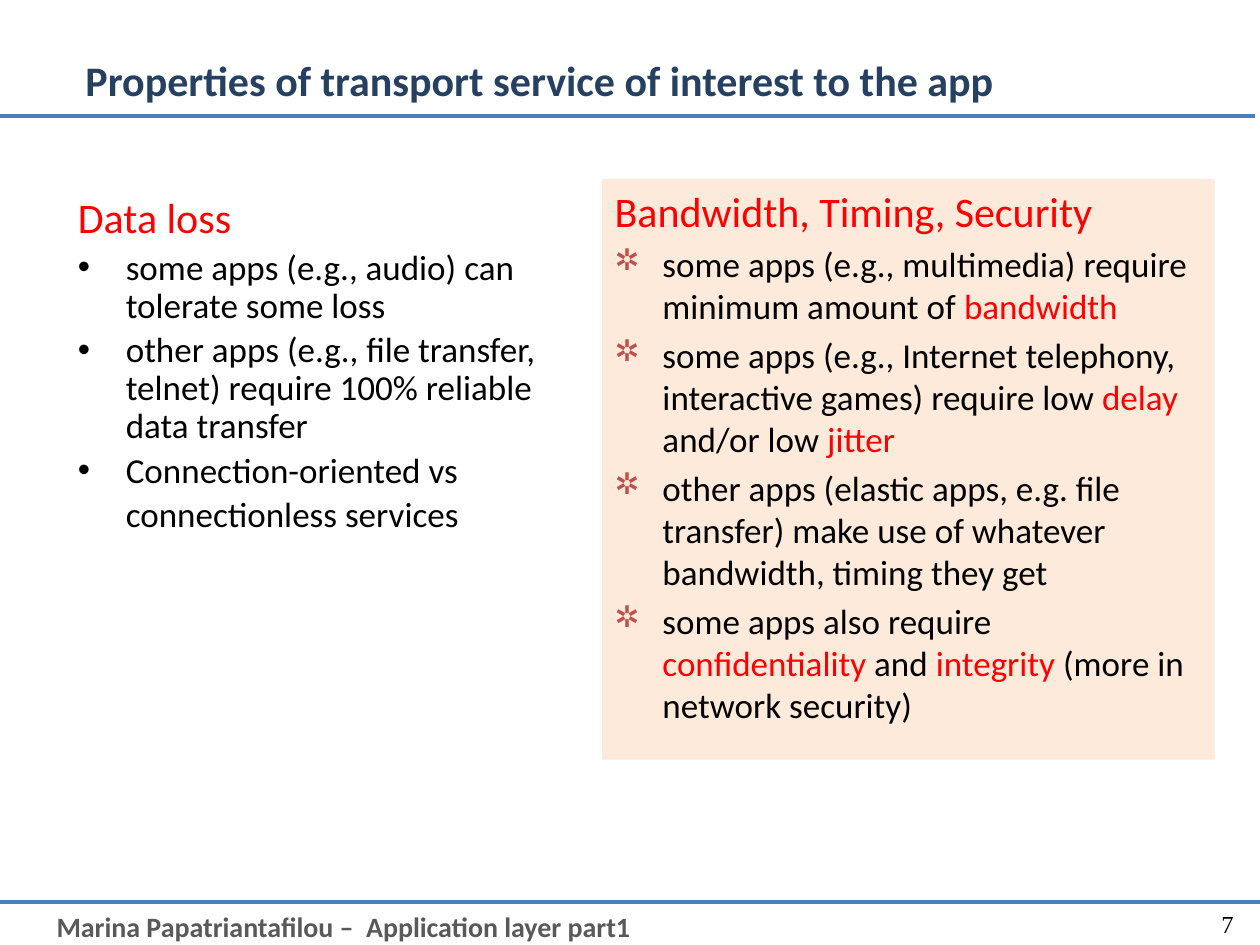
from dataclasses import dataclass
from typing import Optional

import pptx
import pptx.dml.color
import pptx.enum.shapes
import pptx.enum.text
import pptx.oxml.ns
import pptx.util
from lxml import etree
from pptx.util import Inches

ALIGN = pptx.enum.text.PP_ALIGN
ANCHOR = pptx.enum.text.MSO_ANCHOR


@dataclass(frozen=True)
class Theme:
    font: str = "Calibri"
    number_font: str = "Times New Roman"
    ink: str = "000000"
    accent: str = "FF0000"
    title: str = "254061"
    footer: str = "595959"
    rule: str = "4B7EBC"
    panel: str = "FDEADA"
    box_bullet: str = "C0504D"
    title_size: int = 24
    title_end_size: int = 32
    heading_size: int = 24
    body_size: int = 20
    footer_size: int = 16
    number_size: int = 14
    rule_width: float = 2.25


THEME = Theme()


@dataclass(frozen=True)
class Span:
    text: str
    color: str = THEME.ink
    size: int = THEME.body_size
    font: str = THEME.font
    bold: bool = False


@dataclass(frozen=True)
class Bullet:
    mark: str
    font: str
    color: Optional[str] = None
    percent: int = 100


@dataclass(frozen=True)
class Column:
    left: float
    top: float
    width: float
    height: float
    heading: str
    items: list[list[Span]]
    bullet: Bullet
    line_spacing: float = 1.0
    fill: Optional[str] = None


def red(text: str) -> Span:
    return Span(text, THEME.accent)


COLUMNS = [
    Column(
        0.52, 1.52, 4.15, 3.3, "Data loss",
        [
            [Span("some apps (e.g., audio) can tolerate some loss")],
            [Span("other apps (e.g., file transfer, telnet) require 100% reliable data transfer")],
            [Span("Connection-oriented vs connectionless services"),
             Span(" ", size=THEME.heading_size)],
        ],
        Bullet("•", "Arial"), line_spacing=0.9,
    ),
    Column(
        4.78, 1.42, 4.86, 4.61, "Bandwidth, Timing, Security",
        [
            [Span("some apps (e.g., multimedia) require minimum amount of "), red("bandwidth")],
            [Span("some apps (e.g., Internet telephony, interactive games) require low "),
             red("delay"), Span(" and/or low "), red("jitter")],
            [Span("other apps (elastic apps, e.g. file transfer) make use of whatever "
                  "bandwidth, timing they get")],
            [Span("some apps also require "), red("confidentiality"), Span(" and "),
             red("integrity "), Span("(more in network security)")],
        ],
        Bullet("❒", "ZapfDingbats", THEME.box_bullet, 85), fill=THEME.panel,
    ),
]


def rgb(value: str) -> pptx.dml.color.RGBColor:
    return pptx.dml.color.RGBColor.from_string(value)


def add_rule(page, left: float, top: float) -> None:
    rule = page.shapes.add_connector(
        pptx.enum.shapes.MSO_CONNECTOR.STRAIGHT,
        Inches(left), Inches(top), Inches(left + 10), Inches(top))
    rule.line.color.rgb = rgb(THEME.rule)
    rule.line.width = pptx.util.Pt(THEME.rule_width)
    etree.SubElement(rule._element.spPr, pptx.oxml.ns.qn("a:effectLst"))


def set_indent(para, bullet: Optional[Bullet], indent: float) -> None:
    """Hang the paragraph and give it its bullet; call after spacing is set."""
    qn = pptx.oxml.ns.qn
    props = para._p.get_or_add_pPr()
    props.set("marL", str(Inches(indent)))
    props.set("indent", str(-Inches(indent)))
    if bullet is None:
        etree.SubElement(props, qn("a:buNone"))
        return
    if bullet.color:
        color = etree.SubElement(props, qn("a:buClr"))
        etree.SubElement(color, qn("a:srgbClr"), val=bullet.color)
    etree.SubElement(props, qn("a:buSzPct"), val=str(bullet.percent * 1000))
    etree.SubElement(props, qn("a:buFont"), typeface=bullet.font)
    etree.SubElement(props, qn("a:buChar"), char=bullet.mark)


def write_text(para, spans: list[Span], *, align=ALIGN.LEFT, line_spacing: float = 1.0,
               space_before: float = 0, bullet: Optional[Bullet] = None,
               indent: float = 0) -> None:
    para.alignment = align
    para.line_spacing = line_spacing
    para.space_before = pptx.util.Pt(space_before)
    set_indent(para, bullet, indent)
    for span in spans:
        run = para.add_run()
        run.text = span.text
        run.font.name = span.font
        run.font.size = pptx.util.Pt(span.size)
        run.font.bold = span.bold
        run.font.color.rgb = rgb(span.color)


def add_text_box(page, left: float, top: float, width: float, height: float,
                 anchor=ANCHOR.TOP):
    box = page.shapes.add_textbox(Inches(left), Inches(top), Inches(width), Inches(height))
    box.text_frame.word_wrap = True
    box.text_frame.vertical_anchor = anchor
    return box


def add_column(page, column: Column) -> None:
    box = add_text_box(page, column.left, column.top, column.width, column.height)
    if column.fill:
        box.fill.solid()
        box.fill.fore_color.rgb = rgb(column.fill)
    frame = box.text_frame
    heading = Span(column.heading, THEME.accent, THEME.heading_size)
    write_text(frame.paragraphs[0], [heading], line_spacing=column.line_spacing,
               space_before=0.2 * THEME.heading_size, indent=0.38)
    for spans in column.items:
        write_text(frame.add_paragraph(), spans, line_spacing=column.line_spacing,
                   space_before=0.2 * THEME.body_size, bullet=column.bullet, indent=0.38)


def main() -> None:
    deck = pptx.Presentation()
    deck.slide_width, deck.slide_height = Inches(10), Inches(7.5)
    page = deck.slides.add_slide(deck.slide_layouts[6])

    add_rule(page, 0, 7.16)
    footer = add_text_box(page, 0.35, 7.17, 9.25, 0.37)
    write_text(footer.text_frame.paragraphs[0], [
        Span("Marina Papatriantafilou –  Application layer part1",
             THEME.footer, THEME.footer_size, bold=True)])
    add_rule(page, -0.04, 0.92)

    number = add_text_box(page, 9.09, 7.13, 0.8, 0.4, ANCHOR.MIDDLE)
    write_text(number.text_frame.paragraphs[0], [
        Span("7", size=THEME.number_size, font=THEME.number_font)], align=ALIGN.RIGHT)

    title = add_text_box(page, 0.58, 0.25, 9.08, 0.67, ANCHOR.MIDDLE)
    write_text(title.text_frame.paragraphs[0], [
        Span("Properties of transport service of interest to the app",
             THEME.title, THEME.title_size, bold=True),
        Span(" ", THEME.title, THEME.title_end_size, bold=True)])

    for column in COLUMNS:
        add_column(page, column)
    deck.save("out.pptx")


if __name__ == "__main__":
    main()
